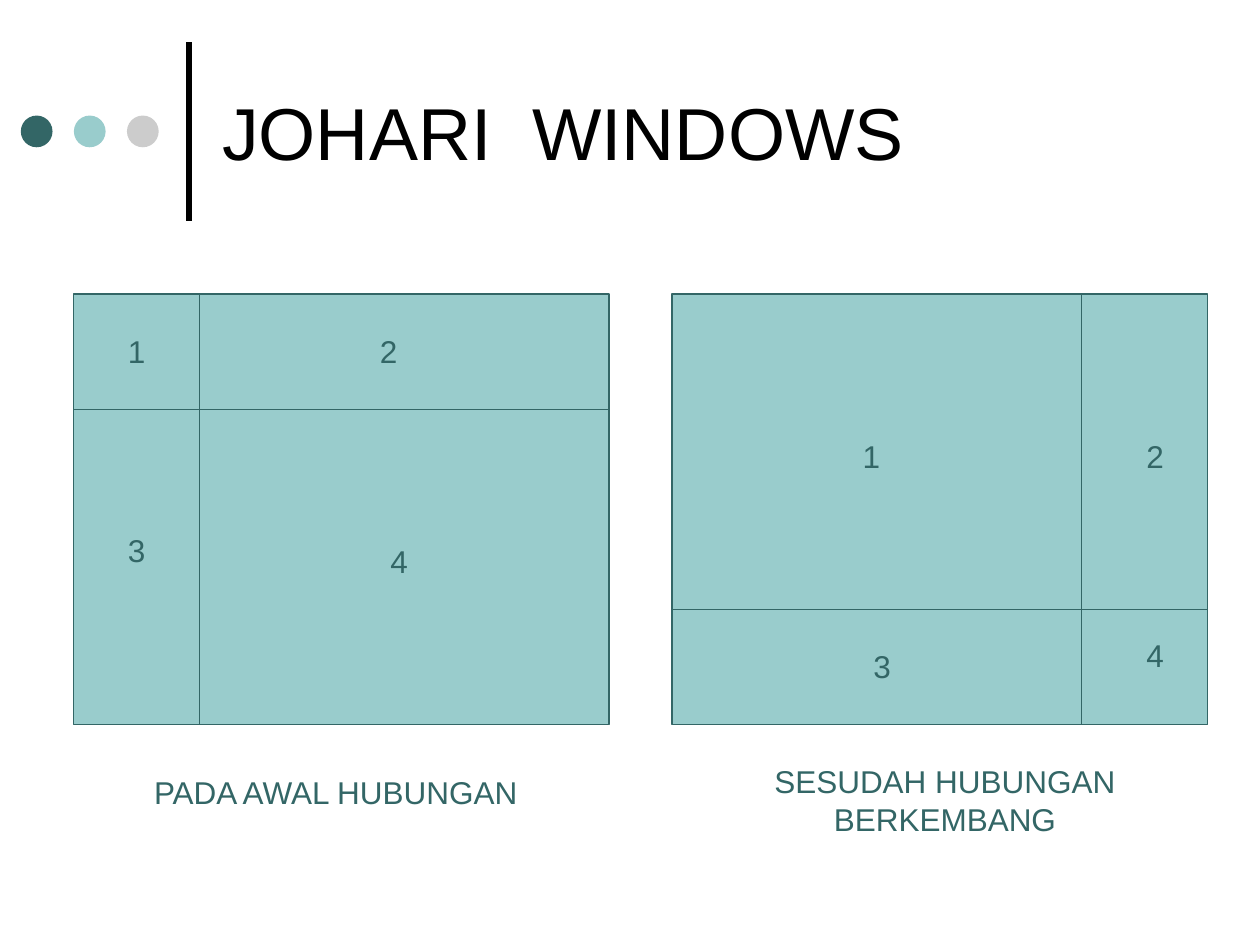
import pptx
import pptx.dml.color
import pptx.enum.shapes
import pptx.enum.text
import pptx.oxml.ns
import pptx.util
from lxml import etree
from pptx.util import Cm

COLOURS = {"ink": "000000", "teal": "336666", "aqua": "99CCCC", "grey": "CCCCCC"}
ANCHOR = pptx.enum.text.MSO_ANCHOR
ALIGN = pptx.enum.text.PP_ALIGN
SHAPE = pptx.enum.shapes.MSO_SHAPE

WINDOW_TOP, WINDOW_WIDTH, WINDOW_HEIGHT = 5.93, 10.8, 8.68

# Lengths in cm; split is measured from the window's top left corner
WINDOWS = [
    {
        "left": 1.48,
        "split": (2.54, 2.33),
        "numbers": [(2.12, 6.56), (7.2, 6.56), (2.12, 10.58), (7.41, 10.8)],
        "caption": ("PADA AWAL HUBUNGAN", 1.48, 15.45, 10.58, 1.02),
    },
    {
        "left": 13.55,
        "split": (8.25, 6.35),
        "numbers": [(16.93, 8.68), (22.65, 8.68), (17.15, 12.91), (22.65, 12.7)],
        "caption": ("SESUDAH HUBUNGAN BERKEMBANG", 13.76, 15.24, 10.58, 1.78),
    },
]


def colour(name):
    return pptx.dml.color.RGBColor.from_string(COLOURS[name])


def set_values(target, values):
    for name, value in values.items():
        setattr(target, name, value)


def add_line(page, start, end, line_colour="teal", weight=0.75):
    points = [Cm(value) for value in (*start, *end)]
    line = page.shapes.add_connector(pptx.enum.shapes.MSO_CONNECTOR.STRAIGHT, *points)
    line.line.color.rgb = colour(line_colour)
    line.line.width = pptx.util.Pt(weight)
    etree.SubElement(line._element.spPr, pptx.oxml.ns.qn("a:effectLst"))


def add_filled(page, kind, area, fill, outline=None):
    shape = page.shapes.add_shape(kind, *[Cm(value) for value in area])
    shape.shadow.inherit = False
    shape.fill.solid()
    shape.fill.fore_color.rgb = colour(fill)
    if outline:
        shape.line.color.rgb = colour(outline)
        shape.line.width = pptx.util.Pt(0.75)
    else:
        shape.line.fill.background()


def add_text(page, text, area, size=18, text_colour="teal",
             align=ALIGN.CENTER, anchor=ANCHOR.TOP):
    box = page.shapes.add_textbox(*[Cm(value) for value in area])
    set_values(box.text_frame, {"word_wrap": True, "vertical_anchor": anchor})
    para = box.text_frame.paragraphs[0]
    para.alignment = align
    span = para.add_run()
    span.text = text
    set_values(span.font, {"name": "Arial", "size": pptx.util.Pt(size)})
    span.font.color.rgb = colour(text_colour)


def add_header(page):
    add_line(page, (3.81, 4.45), (3.81, 0.85), "ink", 3)
    for index, fill in enumerate(("teal", "aqua", "grey")):
        add_filled(page, SHAPE.OVAL, (0.42 + 1.07 * index, 2.33, 0.64, 0.64), fill)
    add_text(page, "JOHARI  WINDOWS", (4.23, 0.53, 19.47, 4.23), 42, "ink",
             ALIGN.LEFT, ANCHOR.MIDDLE)


def add_window(page, window):
    left, top = window["left"], WINDOW_TOP
    right, bottom = left + WINDOW_WIDTH, top + WINDOW_HEIGHT
    split_x, split_y = left + window["split"][0], top + window["split"][1]

    # Pane and its dividers
    add_filled(page, SHAPE.RECTANGLE, (left, top, WINDOW_WIDTH, WINDOW_HEIGHT),
               "aqua", "teal")
    add_line(page, (left, split_y), (right, split_y))
    add_line(page, (split_x, top), (split_x, bottom))

    # Quadrant numbers and caption
    for number, position in enumerate(window["numbers"], start=1):
        add_text(page, str(number), (*position, 1.27, 1.02))
    caption, *area = window["caption"]
    add_text(page, caption, area)


def main():
    deck = pptx.Presentation()
    set_values(deck, {"slide_width": Cm(25.4), "slide_height": Cm(19.05)})
    page = deck.slides.add_slide(deck.slide_layouts[6])
    add_header(page)
    for window in WINDOWS:
        add_window(page, window)
    deck.save("out.pptx")


if __name__ == "__main__":
    main()
